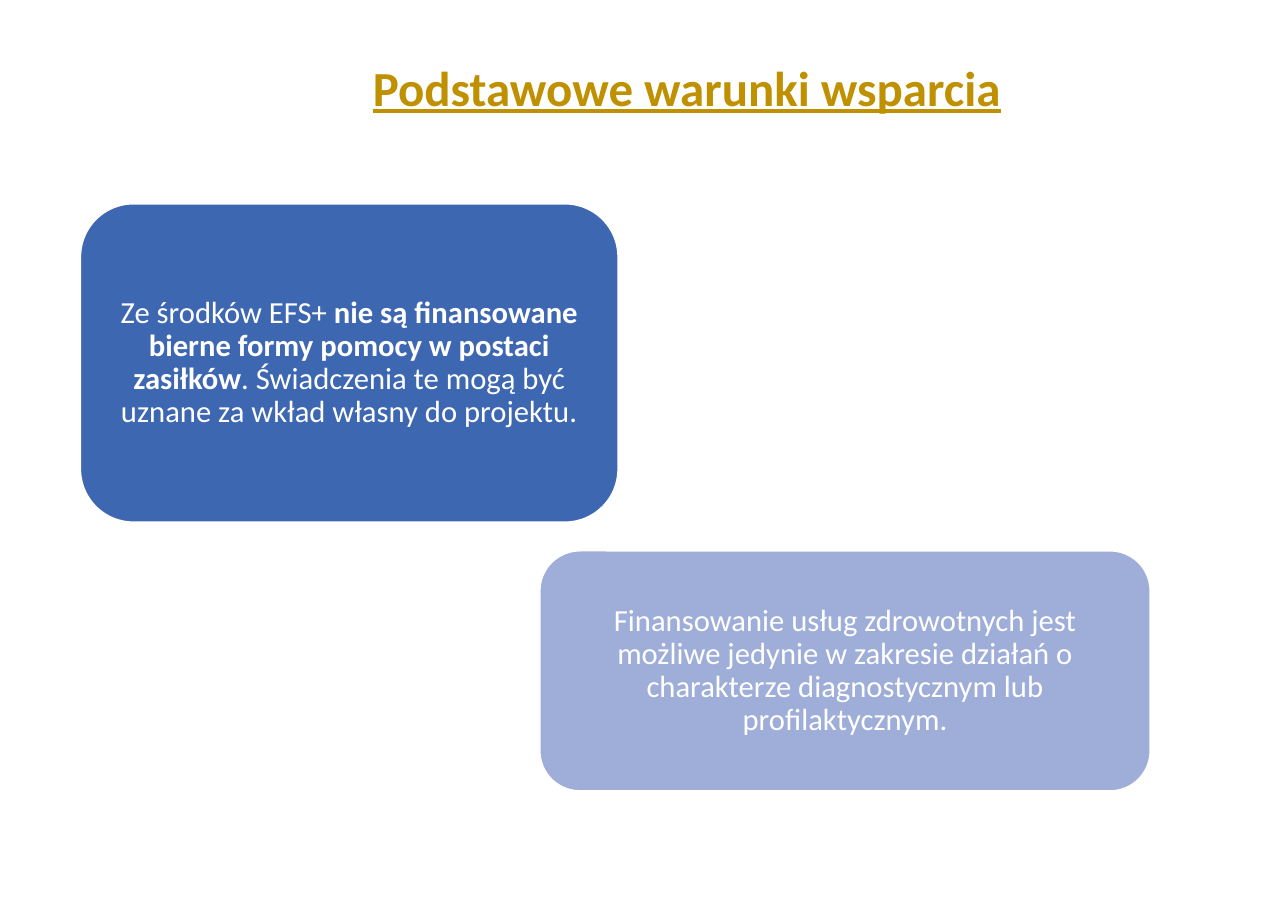
import dataclasses

import pptx
import pptx.dml.color
import pptx.enum.shapes
import pptx.enum.text
import pptx.util

PX = 9144


@dataclasses.dataclass(frozen=True)
class Theme:
    font: str = "Calibri"
    title_size: int = 32
    body_size: int = 20
    gold: str = "BF9000"
    white: str = "FFFFFF"
    blue: str = "3E67B2"
    lavender: str = "9FAED8"


THEME = Theme()


def color(value):
    return pptx.dml.color.RGBColor.from_string(value)


def place(shape, left, top, width, height):
    shape.left, shape.top = left * PX, top * PX
    shape.width, shape.height = width * PX, height * PX


def add_text(paragraph, text, size=THEME.body_size, fill=THEME.white, bold=False, underline=False):
    run = paragraph.add_run()
    run.text = text
    run.font.name = THEME.font
    run.font.size = pptx.util.Pt(size)
    run.font.color.rgb = color(fill)
    run.font.bold = bold
    run.font.underline = underline


def centred_paragraph(shape, anchor):
    frame = shape.text_frame
    frame.word_wrap = True
    frame.auto_size = pptx.enum.text.MSO_AUTO_SIZE.NONE
    frame.vertical_anchor = anchor
    paragraph = frame.paragraphs[0]
    paragraph.alignment = pptx.enum.text.PP_ALIGN.CENTER
    paragraph.line_spacing = 0.9
    return paragraph


def set_title(slide, text, box):
    title = slide.shapes.title
    place(title, *box)
    paragraph = centred_paragraph(title, pptx.enum.text.MSO_ANCHOR.BOTTOM)
    add_text(paragraph, text, size=THEME.title_size, fill=THEME.gold, bold=True, underline=True)


def add_card(slide, box, fill, parts):
    card = slide.shapes.add_shape(
        pptx.enum.shapes.MSO_SHAPE.ROUNDED_RECTANGLE, *(length * PX for length in box)
    )
    card.shadow.inherit = False
    card.fill.solid()
    card.fill.fore_color.rgb = color(fill)
    card.line.color.rgb = color(THEME.white)
    card.line.width = pptx.util.Pt(1)
    frame = card.text_frame
    frame.margin_left = frame.margin_right = frame.margin_top = frame.margin_bottom = 8 * PX
    paragraph = centred_paragraph(card, pptx.enum.text.MSO_ANCHOR.MIDDLE)
    for text, bold in parts:
        add_text(paragraph, text, bold=bold)


def main():
    presentation = pptx.Presentation()
    presentation.slide_width = 1169 * PX
    presentation.slide_height = 827 * PX
    slide = presentation.slides.add_slide(presentation.slide_layouts.get_by_name("Title Only"))

    set_title(slide, "Podstawowe warunki wsparcia", (230, 59, 787, 52))
    add_card(slide, (73, 185, 488, 289), THEME.blue, [
        ("Ze środków EFS+ ", False),
        ("nie są finansowane bierne formy pomocy w postaci zasiłków", True),
        (". Świadczenia te mogą być uznane za wkład własny do projektu.", False),
    ])
    add_card(slide, (490, 500, 554, 218), THEME.lavender, [
        ("Finansowanie usług zdrowotnych jest możliwe jedynie w zakresie działań "
         "o charakterze diagnostycznym lub profilaktycznym.", False),
    ])
    presentation.save("out.pptx")


if __name__ == "__main__":
    main()
